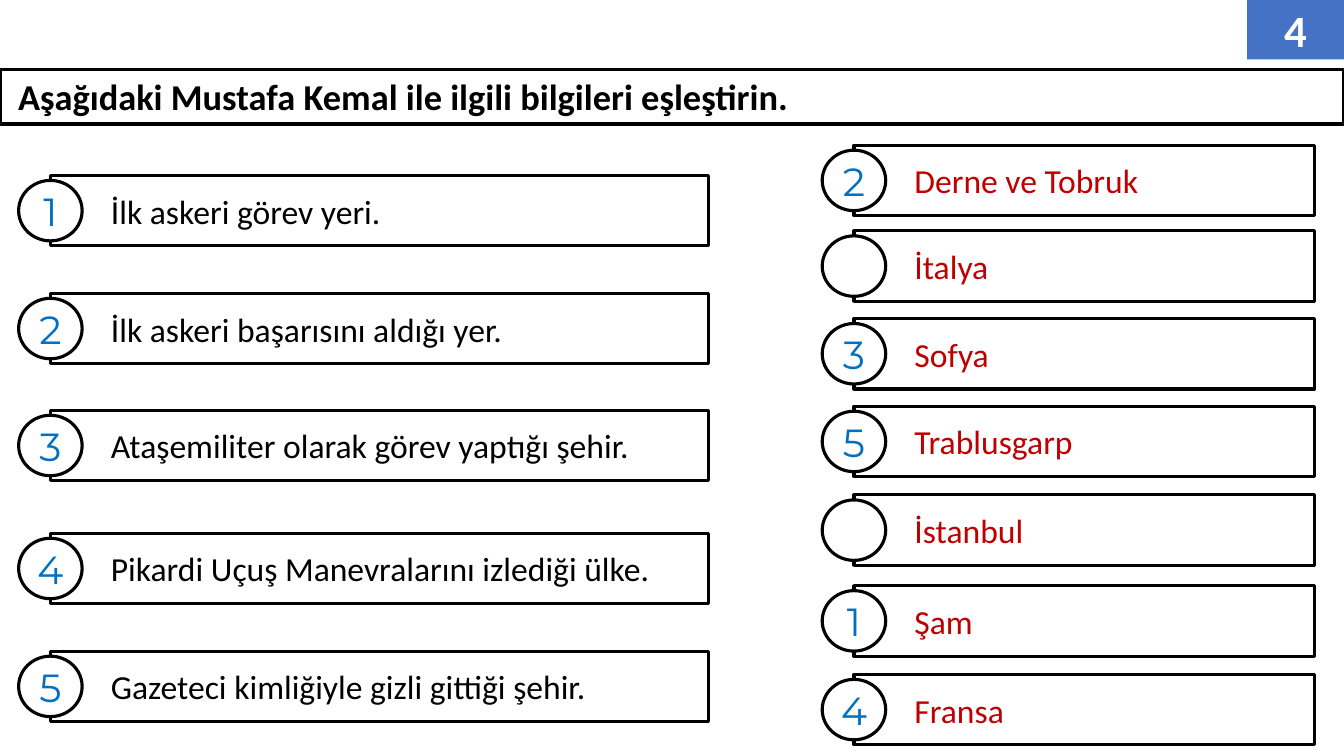
from dataclasses import dataclass

from pptx import Presentation
from pptx.dml.color import RGBColor
from pptx.enum.shapes import MSO_SHAPE as Shape
from pptx.enum.text import MSO_ANCHOR as Anchor, PP_ALIGN as Align
from pptx.util import Inches, Pt


@dataclass(frozen=True)
class Theme:
    black: str = "000000"
    white: str = "FFFFFF"
    badge: str = "4472C4"
    answer: str = "C00000"
    number: str = "0070C0"
    body_font: str = "Calibri"
    number_font: str = "Montserrat"
    badge_size: int = 32
    question_size: int = 26
    item_size: int = 24
    number_size: int = 28
    outline: float = 2.25


THEME = Theme()
SLIDE_WIDTH, SLIDE_HEIGHT = 13.33, 7.5
BAR_HEIGHT = 0.7
CIRCLE_WIDTH, CIRCLE_HEIGHT = 0.63, 0.6

# Each item: top of its bar, number in its circle, wording
CLUES = [
    (1.74, "1", "İlk askeri görev yeri."),
    (2.91, "2", "İlk askeri başarısını aldığı yer."),
    (4.07, "3", "Ataşemiliter olarak görev yaptığı şehir."),
    (5.29, "4", "Pikardi Uçuş Manevralarını izlediği ülke."),
    (6.46, "5", "Gazeteci kimliğiyle gizli gittiği şehir."),
]
ANSWERS = [
    (1.44, "2", "Derne ve Tobruk"),
    (2.29, "", "İtalya"),
    (3.16, "3", "Sofya"),
    (4.03, "5", "Trablusgarp"),
    (4.91, "", "İstanbul"),
    (5.81, "1", "Şam"),
    (6.69, "4", "Fransa"),
]


def add_box(slide, kind, left, top, width, height, fill=None, outlined=True):
    box = slide.shapes.add_shape(
        kind, Inches(left), Inches(top), Inches(width), Inches(height))
    box.shadow.inherit = False
    if fill:
        box.fill.solid()
        box.fill.fore_color.rgb = RGBColor.from_string(fill)
    else:
        box.fill.background()
    if outlined:
        box.line.color.rgb = RGBColor.from_string(THEME.black)
        box.line.width = Pt(THEME.outline)
    else:
        box.line.fill.background()
    return box


def write(box, wording, size, color, font=THEME.body_font, bold=False,
          align=Align.LEFT, anchor=Anchor.MIDDLE, inset=0.1):
    """Put one styled paragraph in the box; inset is the side margin in inches."""
    frame = box.text_frame
    frame.word_wrap = True
    frame.vertical_anchor = anchor
    frame.margin_left = Inches(inset)
    frame.margin_right = Inches(min(inset, 0.1))
    frame.text = wording
    paragraph = frame.paragraphs[0]
    paragraph.alignment = align
    for run in paragraph.runs:
        run.font.name = font
        run.font.size = Pt(size)
        run.font.bold = bold
        run.font.color.rgb = RGBColor.from_string(color)


def add_header(slide, left, top, width):
    badge_width = 0.96
    badge = add_box(slide, Shape.RECTANGLE, left + width - badge_width, top,
                    badge_width, 0.59, THEME.badge, outlined=False)
    write(badge, "4", THEME.badge_size, THEME.white, bold=True, align=Align.CENTER)
    question = add_box(slide, Shape.RECTANGLE, left, top + 0.69, width, 0.54)
    write(question, "Aşağıdaki Mustafa Kemal ile ilgili bilgileri eşleştirin.",
          THEME.question_size, THEME.black, bold=True, anchor=Anchor.TOP, inset=0.18)


def add_column(slide, items, left, width, color):
    """Stack bars, each with a numbered circle centred on its left edge."""
    for top, number, wording in items:
        bar = add_box(slide, Shape.RECTANGLE, left, top, width, BAR_HEIGHT)
        write(bar, wording, THEME.item_size, color, inset=0.6)
        circle = add_box(slide, Shape.OVAL, left - CIRCLE_WIDTH / 2,
                         top + (BAR_HEIGHT - CIRCLE_HEIGHT) / 2,
                         CIRCLE_WIDTH, CIRCLE_HEIGHT, THEME.white)
        if number:
            write(circle, number, THEME.number_size, THEME.number,
                  font=THEME.number_font, align=Align.CENTER, inset=0)


def main():
    deck = Presentation()
    deck.slide_width = Inches(SLIDE_WIDTH)
    deck.slide_height = Inches(SLIDE_HEIGHT)
    slide = deck.slides.add_slide(deck.slide_layouts[6])
    add_header(slide, 0, 0, SLIDE_WIDTH)
    add_column(slide, CLUES, 0.5, 6.53, THEME.black)
    add_column(slide, ANSWERS, 8.47, 4.57, THEME.answer)
    deck.save("out.pptx")


if __name__ == "__main__":
    main()
